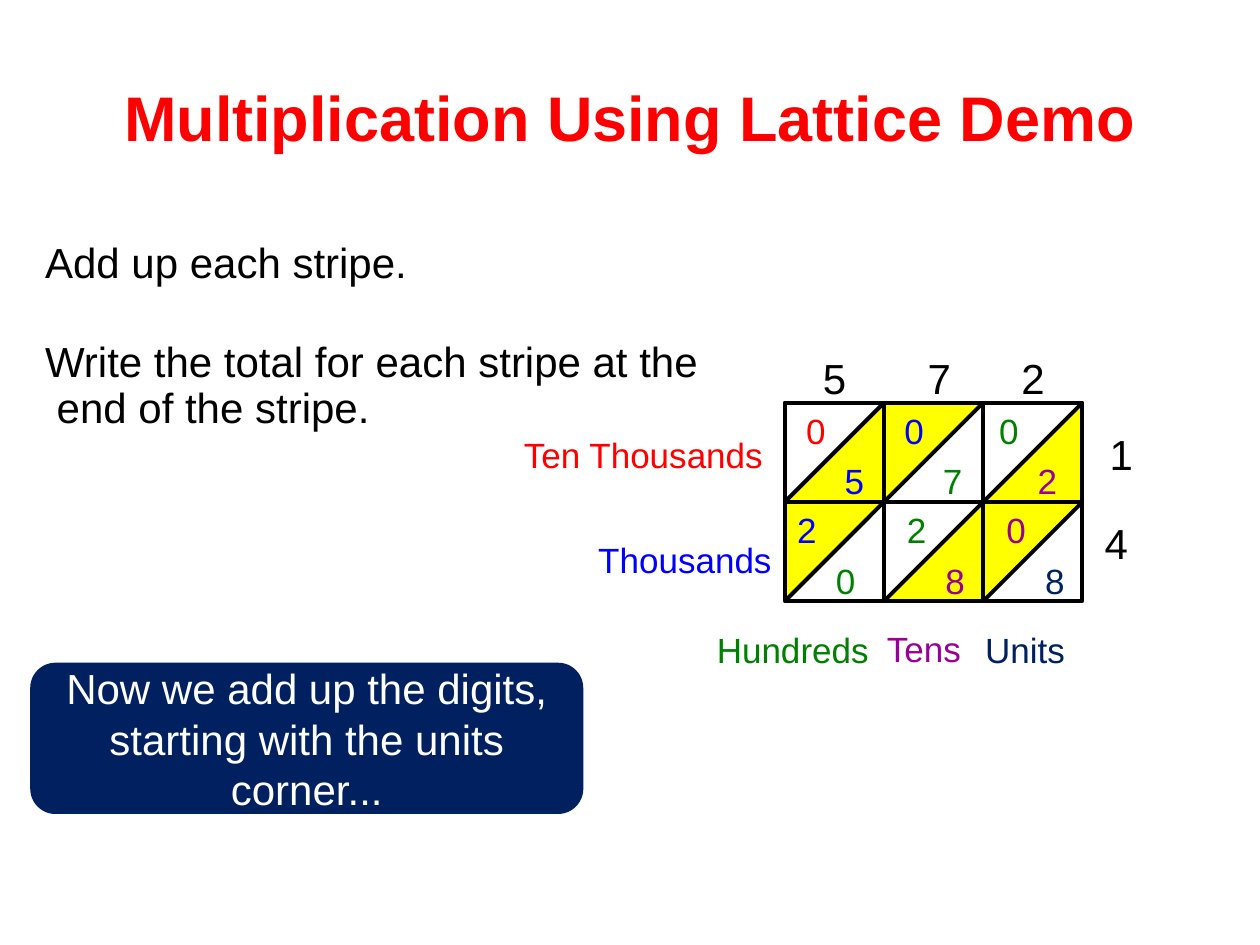
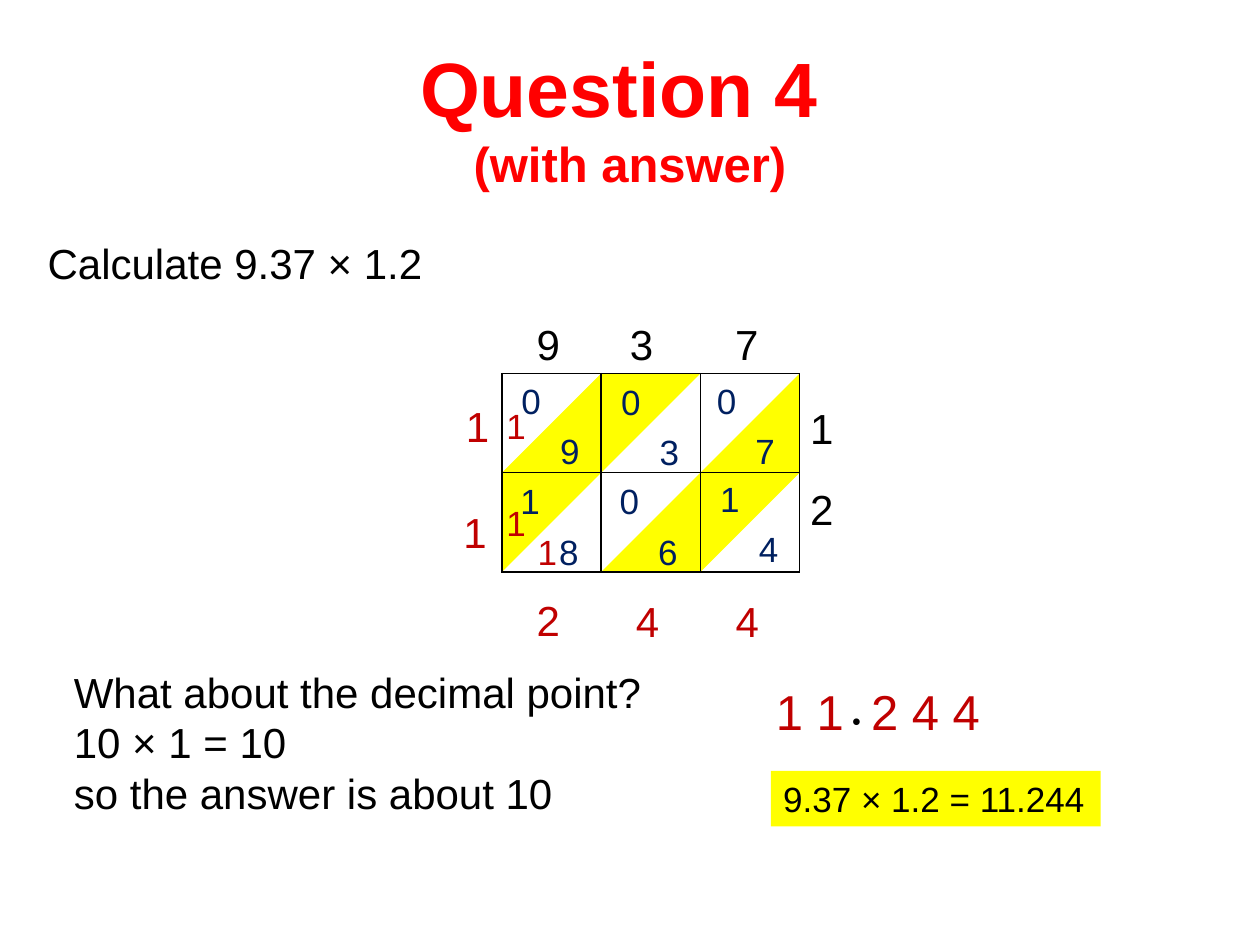
import pptx
import pptx.util
import pptx.dml.color
import pptx.enum.shapes
import pptx.enum.text
import pptx.oxml.ns
import lxml.etree

Cm = pptx.util.Cm
Pt = pptx.util.Pt
Kind = pptx.enum.shapes.MSO_SHAPE
Align = pptx.enum.text.PP_ALIGN
Anchor = pptx.enum.text.MSO_ANCHOR
qn = pptx.oxml.ns.qn

HUES = {
    "ink": "000000",
    "white": "FFFFFF",
    "red": "FF0000",
    "blue": "0000FF",
    "green": "008000",
    "plum": "990099",
    "navy": "002060",
    "brick": "C00000",
    "stripe": "FFFF00",
}
FONT = "Arial"
CELL = 2
COLS, ROWS = 3, 2
STRIPES = [
    [(0, 2), (0, 1), (1, 0), (2, 0)],
    [(1, 2), (3, 0), (3, 1), (2, 2)],
]
CUTS = [(0, 1, 1, 0), (0, 2, 2, 0), (1, 2, 3, 0), (2, 2, 3, 1)]


def rgb(hue):
    return pptx.dml.color.RGBColor.from_string(HUES[hue])


def sub(node, tag, **attrs):
    return lxml.etree.SubElement(node, qn(tag), attrs)


class Deck:
    def __init__(self):
        self.prs = pptx.Presentation()
        self.prs.slide_width = Cm(25.4)
        self.prs.slide_height = Cm(19.05)
        self.shapes = None

    def page(self):
        self.shapes = self.prs.slides.add_slide(self.prs.slide_layouts[6]).shapes

    def style(self, font, size, hue, bold=False, face=FONT):
        font.name = face
        font.size = Pt(size)
        font.bold = bold
        font.color.rgb = rgb(hue)

    def label(self, shape, rows, size=24, hue="ink", gap=0, lead=None, align=None,
              tabs=(), face=FONT):
        frame = shape.text_frame
        frame.word_wrap = True
        for i, row in enumerate(rows):
            para = frame.add_paragraph() if i else frame.paragraphs[0]
            para.text = row
            para.alignment = align
            para.line_spacing = lead
            if i:
                para.space_before = Pt(gap)
            if tabs:
                stops = sub(para._p.get_or_add_pPr(), "a:tabLst")
                for stop in tabs:
                    sub(stops, "a:tab", pos=str(Cm(stop)), algn="l")
            self.style(para.font, size, hue, face=face)
        return frame

    def text(self, x, y, w, h, *rows, **opts):
        box = self.shapes.add_textbox(Cm(x), Cm(y), Cm(w), Cm(h))
        return self.label(box, rows, **opts)

    def title(self, y, *parts):
        box = self.shapes.add_textbox(Cm(1.2), Cm(y), Cm(23), Cm(3.18))
        frame = box.text_frame
        frame.word_wrap = True
        frame.vertical_anchor = Anchor.MIDDLE
        para = frame.paragraphs[0]
        para.alignment = Align.CENTER
        for i, (words, size) in enumerate(parts):
            if i:
                para.add_line_break()
            run = para.add_run()
            run.text = words
            self.style(run.font, size, "red", True)

    def panel(self, kind, x, y, w, h, fill=None, line=None):
        shape = self.shapes.add_shape(kind, Cm(x), Cm(y), Cm(w), Cm(h))
        self.paint(shape, fill, line)
        return shape

    def paint(self, shape, fill, line=None):
        shape.shadow.inherit = False
        if fill:
            shape.fill.solid()
            shape.fill.fore_color.rgb = rgb(fill)
        else:
            shape.fill.background()
        if line:
            shape.line.color.rgb = rgb("ink")
            shape.line.width = Pt(line)
        else:
            shape.line.fill.background()

    def stripes(self, x, y):
        for band in STRIPES:
            pts = [(Cm(x + CELL * c), Cm(y + CELL * r)) for c, r in band]
            edge = self.shapes.build_freeform(*pts[0])
            edge.add_line_segments(pts[1:], close=True)
            self.paint(edge.convert_to_shape(), "stripe")

    def boxes(self, x, y):
        for r in range(ROWS):
            for c in range(COLS):
                self.panel(Kind.RECTANGLE, x + CELL * c, y + CELL * r, CELL, CELL, line=2.25)

    def cuts(self, x, y):
        for cut in CUTS:
            ends = [Cm((y if i % 2 else x) + CELL * n) for i, n in enumerate(cut)]
            line = self.shapes.add_connector(pptx.enum.shapes.MSO_CONNECTOR.STRAIGHT, *ends)
            line.line.color.rgb = rgb("ink")
            line.line.width = Pt(2.25)
            sub(line._element.spPr, "a:effectLst")

    def table(self, x, y):
        rows, cols = ROWS + 2, COLS + 2
        grid = self.shapes.add_table(rows, cols, Cm(x - CELL), Cm(y - CELL),
                                     Cm(CELL * cols), Cm(CELL * rows)).table
        grid.first_row = grid.horz_banding = False
        sides = {"a:lnL": (0, -1), "a:lnR": (0, 1), "a:lnT": (-1, 0), "a:lnB": (1, 0)}

        def inner(r, c):
            return 0 < r <= ROWS and 0 < c <= COLS

        for r in range(rows):
            for c in range(cols):
                cell = grid.cell(r, c)
                props = cell._tc.get_or_add_tcPr()
                for tag, (dr, dc) in sides.items():
                    edge = sub(props, tag, w=str(Pt(1)))
                    if inner(r, c) or inner(r + dr, c + dc):
                        sub(sub(edge, "a:solidFill"), "a:srgbClr", val=HUES["ink"])
                    else:
                        sub(edge, "a:noFill")
                cell.fill.background()

    def pair(self, x, y, top, low, hue, tint):
        frame = self.text(x, y, 1.8, 2.13, top, low, size=20, hue=hue, gap=4.8)
        para = frame.paragraphs[1]
        para._p.get_or_add_pPr().set("marL", str(Cm(0.78)))
        para.font.color.rgb = rgb(tint)


def demo(deck):
    deck.page()
    x, y = 15.82, 8.12
    deck.stripes(x, y)
    deck.text(0.66, 4.75, 24.05, 5, "Add up each stripe.",
              "Write the total for each stripe at the\v end of the stripe.",
              gap=31, lead=0.9)
    deck.text(16.1, 6.99, 5.8, 1.27, "\t5\t7\t2", tabs=(0.24, 2.35, 4.24))
    deck.title(0.76, ("Multiplication Using Lattice Demo", 36))
    deck.text(22.12, 8.51, 1.4, 1.27, "1")
    deck.text(22.02, 10.31, 1.2, 1.27, "4")
    deck.boxes(x, y)
    deck.cuts(x, y)
    for pair in [
        (16, 8.13, "0", "5", "red", "blue"),
        (17.98, 8.13, "0", "7", "blue", "green"),
        (19.89, 8.13, "0", "2", "green", "plum"),
        (15.82, 10.13, "2", "0", "blue", "green"),
        (18.03, 10.13, "2", "8", "green", "plum"),
        (20.04, 10.13, "0", "8", "plum", "navy"),
    ]:
        deck.pair(*pair)
    for left, top, wide, name, hue in [
        (10.31, 8.61, 5.59, "Ten Thousands", "red"),
        (11.81, 10.74, 5.59, "Thousands", "blue"),
        (19.61, 12.55, 2.6, "Units", "navy"),
        (14.2, 12.55, 3.65, "Hundreds", "green"),
        (17.63, 12.52, 2.13, "Tens", "plum"),
    ]:
        deck.text(left, top, wide, 1.12, name, size=20, hue=hue)
    note = deck.panel(Kind.ROUNDED_RECTANGLE, 0.61, 13.36, 11.15, 3.05, "navy")
    frame = deck.label(note, ["Now we add up the digits, starting with the units corner..."],
                       hue="white", align=Align.CENTER)
    frame.vertical_anchor = Anchor.MIDDLE


def answer(deck):
    deck.page()
    x, y = 10.12, 7.53
    deck.stripes(x, y)
    deck.title(0.76, ("Question 4 ", 44), ("(with answer)", 28))
    deck.text(0.71, 4.67, 24, 1.27, "Calculate 9.37 × 1.2")
    deck.table(x, y)
    deck.text(10.57, 6.3, 5.87, 1.27, "9\t3\t7", tabs=(1.88, 4))
    deck.text(16.08, 7.98, 1, 2.95, "1", "2", gap=18)
    for left, top, *digits in [
        (10.26, 7.52, "0", "9"),
        (12.27, 7.54, "0", "3"),
        (14.2, 7.52, "0", "7"),
        (10.24, 9.55, "1", "8"),
        (12.24, 9.55, "0", "6"),
        (14.27, 9.5, "1", "4"),
    ]:
        deck.pair(left, top, *digits, "navy", "navy")
    for left, top, digit, size in [
        (9.14, 7.95, "1", 24),
        (9.09, 10.08, "1", 24),
        (12.57, 11.89, "4", 24),
        (14.58, 11.89, "4", 24),
        (10.57, 11.86, "2", 24),
        (10.59, 10.57, "1", 20),
        (9.96, 9.98, "1", 20),
        (9.96, 8.03, "1", 20),
    ]:
        deck.text(left, top, 1, 1.2, digit, size=size, hue="brick")
    result = deck.panel(Kind.RECTANGLE, 15.54, 15.54, 6.65, 1.12, "stripe")
    deck.label(result, ["9.37 × 1.2 = 11.244"], size=20, align=Align.LEFT)
    deck.text(1.24, 13.31, 12.2, 3.33, "What about the decimal point?",
              "10 × 1 = 10", "so the answer is about 10")
    deck.text(15.39, 13.61, 5.46, 1.45, "1 1\t2 4 4", size=28, hue="brick", tabs=(1.92,))
    deck.text(16.92, 14.05, 0.8, 0.94, "•", size=16, face="Times New Roman")


def main():
    deck = Deck()
    demo(deck)
    answer(deck)
    deck.prs.save("out.pptx")


if __name__ == "__main__":
    main()
